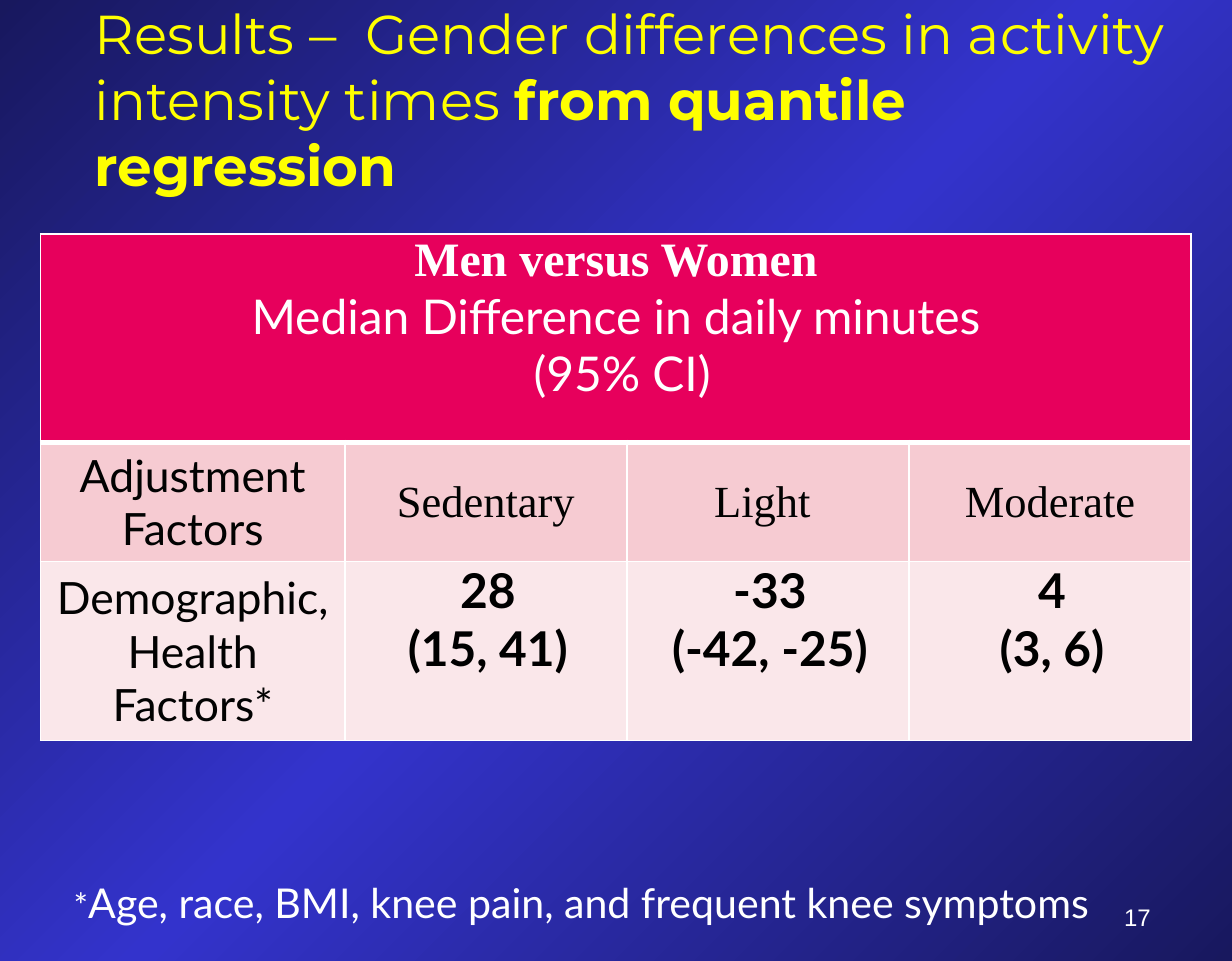
from dataclasses import dataclass

import pptx
import pptx.dml.color
import pptx.enum.text
import pptx.oxml
import pptx.oxml.ns
import pptx.util
from pptx.util import Inches

ALIGN = pptx.enum.text.PP_ALIGN
ANCHOR = pptx.enum.text.MSO_ANCHOR


@dataclass(frozen=True)
class Theme:
    edge: str = "18185E"
    glow: str = "3333CC"
    yellow: str = "FFFF00"
    white: str = "FFFFFF"
    black: str = "000000"
    label: str = "020202"
    header: str = "E7005C"
    band: str = "F6CBD2"
    pale: str = "FAE7EA"
    title_font: str = "Montserrat"
    body_font: str = "Lato"
    serif: str = "Times New Roman"
    number_font: str = "Arial"
    title_size: int = 32
    value_size: int = 28
    label_size: int = 26
    note_size: int = 24
    star_size: int = 20
    number_size: int = 14


T = Theme()


@dataclass(frozen=True)
class Cell:
    row: int
    col: int
    lines: tuple[str, ...]
    fill: str
    size: int
    font: str = T.body_font
    color: str = T.black
    bold: bool = False
    anchor: ANCHOR = ANCHOR.MIDDLE
    margins: tuple[float, float] = (0.07, 0.07)


def rgb(color: str) -> pptx.dml.color.RGBColor:
    return pptx.dml.color.RGBColor.from_string(color)


def add_run(p, text: str, *, size: int, font: str = T.body_font,
            color: str = T.white, bold: bool = False) -> None:
    r = p.add_run()
    r.text = text
    r.font.size = pptx.util.Pt(size)
    r.font.name = font
    r.font.bold = bold
    r.font.color.rgb = rgb(color)


def add_box(s, left: float, top: float, width: float, height: float,
            anchor: ANCHOR = ANCHOR.TOP, align: ALIGN = ALIGN.LEFT):
    """Add a wrapping text box and return its first paragraph."""
    sp = s.shapes.add_textbox(Inches(left), Inches(top), Inches(width), Inches(height))
    tf = sp.text_frame
    tf.word_wrap = True
    tf.vertical_anchor = anchor
    p = tf.paragraphs[0]
    p.alignment = align
    return p


def set_background(s) -> None:
    fill = s.background.fill
    fill.gradient()
    fill.gradient_angle = 315
    stops = fill.gradient_stops
    for stop, position in zip(stops, (0, 1)):
        stop.color.rgb = rgb(T.edge)
        stop.position = position
    # The public gradient has two stops; the bright middle one is XML
    first = s.background._cSld.find(".//" + pptx.oxml.ns.qn("a:gs"))
    first.addnext(pptx.oxml.parse_xml(
        f'<a:gs {pptx.oxml.ns.nsdecls("a")} pos="50000">'
        f'<a:srgbClr val="{T.glow}"/></a:gs>'))


def set_borders(cell, **widths: float) -> None:
    tc_pr = cell._tc.get_or_add_tcPr()
    for i, side in enumerate("LRTB"):
        width = pptx.util.Pt(widths.get(side, 1))
        tc_pr.insert(i, pptx.oxml.parse_xml(
            f'<a:ln{side} {pptx.oxml.ns.nsdecls("a")} w="{width}"><a:solidFill>'
            f'<a:srgbClr val="{T.white}"/></a:solidFill></a:ln{side}>'))


def fill_cell(cell, c: Cell) -> None:
    cell.vertical_anchor = c.anchor
    cell.margin_left, cell.margin_right = map(Inches, c.margins)
    cell.margin_top = cell.margin_bottom = 0
    tf = cell.text_frame
    for i, line in enumerate(c.lines):
        p = tf.add_paragraph() if i else tf.paragraphs[0]
        p.alignment = ALIGN.CENTER
        # The table heading opens with a bold serif line
        lead = c.row == 0 and i == 0
        add_run(p, line, size=c.size, font=T.serif if lead else c.font,
                color=c.color, bold=lead or c.bold)


def add_results_table(s, cells: list[Cell]) -> None:
    widths, heights = (2.47, 2.29, 2.29, 2.29), (1.69, 0.97, 1.45)
    table = s.shapes.add_table(len(heights), len(widths), Inches(0.33), Inches(1.9),
                               Inches(sum(widths)), Inches(sum(heights))).table
    for column, width in zip(table.columns, widths):
        column.width = Inches(width)
    for row, height in zip(table.rows, heights):
        row.height = Inches(height)
    table.cell(0, 0).merge(table.cell(0, len(widths) - 1))
    for r, fill in enumerate((T.header, T.band, T.pale)):
        for c in range(len(widths)):
            cell = table.cell(r, c)
            cell.fill.solid()
            cell.fill.fore_color.rgb = rgb(fill)
            set_borders(cell, T=3 if r == 1 else 1, B=3 if r == 0 else 1)
    for c in cells:
        fill_cell(table.cell(c.row, c.col), c)


def main() -> None:
    prs = pptx.Presentation()
    prs.slide_width, prs.slide_height = Inches(10), Inches(7.8)
    s = prs.slides.add_slide(prs.slide_layouts[6])
    set_background(s)

    # Title
    p = add_box(s, 0.67, 0.48, 9.33, 1.17, ANCHOR.BOTTOM)
    title = dict(size=T.title_size, font=T.title_font, color=T.yellow)
    add_run(p, "Results –  Gender differences in activity intensity times ", **title)
    add_run(p, "from quantile regression", bold=True, **title)

    # Results table
    results = [("Sedentary", "28", "(15, 41)"),
               ("Light ", "-33", "(-42, -25)"),
               ("Moderate", "4", "(3, 6)")]
    heading = ("Men versus Women", "Median Difference in daily minutes", " (95% CI)")
    cells = [Cell(0, 0, heading, T.header, T.value_size, color=T.white, anchor=ANCHOR.TOP),
             Cell(1, 0, ("Adjustment Factors",), T.band, T.label_size, color=T.label),
             Cell(2, 0, ("Demographic, Health Factors*",), T.pale, T.label_size,
                  color=T.label)]
    for col, (activity, median, interval) in enumerate(results, start=1):
        cells += [Cell(1, col, (activity,), T.band, T.label_size, T.serif, T.label),
                  Cell(2, col, (median, interval), T.pale, T.value_size, bold=True,
                       anchor=ANCHOR.TOP, margins=(0.04, 0.01))]
    add_results_table(s, cells)

    # Footnote
    p = add_box(s, 0, 7.07, 10, 0.5)
    p._p.get_or_add_pPr().set("marL", str(Inches(0.5)))
    add_run(p, "*", size=T.star_size)
    add_run(p, "Age, race, BMI, knee pain, and frequent knee symptoms", size=T.note_size)

    # Slide number
    p = add_box(s, 7.36, 7.09, 2.08, 0.52, ANCHOR.BOTTOM, ALIGN.RIGHT)
    add_run(p, "17", size=T.number_size, font=T.number_font)

    prs.save("out.pptx")


if __name__ == "__main__":
    main()
